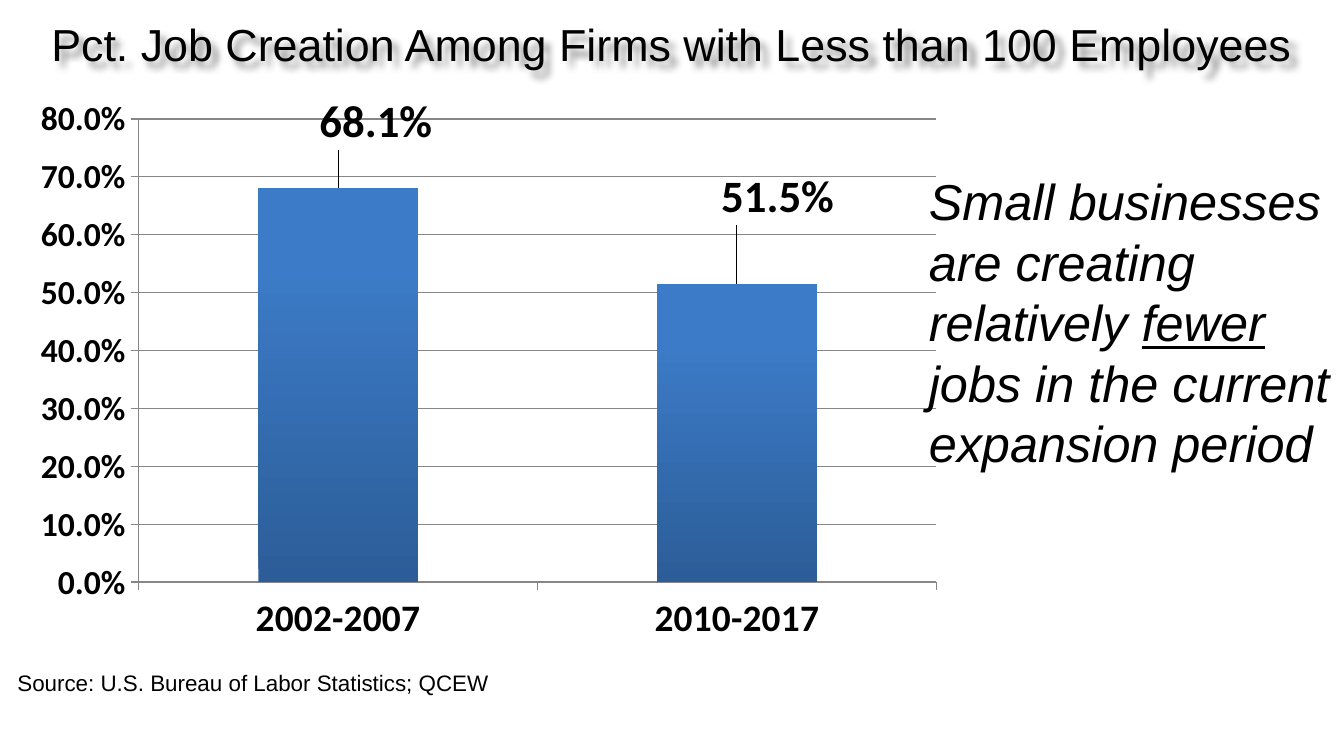
from lxml import etree
from pptx import Presentation
from pptx import util as u
from pptx.chart import data as chart_data
from pptx.dml import color
from pptx.enum import chart as ch, text
from pptx.oxml import ns, parse_xml

PX = 9525
BLACK = color.RGBColor(0x00, 0x00, 0x00)
GRID = color.RGBColor(0x86, 0x86, 0x86)
BAR_DARK = color.RGBColor(0x2C, 0x5D, 0x98)
BAR_LIGHT = color.RGBColor(0x3C, 0x7B, 0xC7)
SHADOW = (
    f'<a:effectLst {ns.nsdecls("a")}><a:outerShdw blurRad="38100" dist="50800" dir="2700000" '
    'algn="tl"><a:srgbClr val="000000"><a:alpha val="43000"/></a:srgbClr></a:outerShdw></a:effectLst>'
)
NO_LEADERS = (
    f'<c:extLst {ns.nsdecls("c")}><c:ext uri="{{CE6537A1-D6FC-4f65-9D91-7224C49458BB}}" '
    'xmlns:c15="http://schemas.microsoft.com/office/drawing/2012/chart">'
    '<c15:showLeaderLines val="0"/></c:ext></c:extLst>'
)


def px(*lengths):
    """Turn px lengths into EMU."""
    return [u.Emu(length * PX) for length in lengths]


def apply(target, **values):
    """Set each given attribute on the target."""
    for key, value in values.items():
        setattr(target, key, value)


def style(font, size, name="Arial", **values):
    """Give a font its size, face and black colour."""
    apply(font, size=u.Pt(size), name=name, **values)
    font.color.rgb = BLACK


def manual_layout(**values):
    """Make a chart layout element from the given settings."""
    layout = etree.Element(ns.qn("c:layout"))
    manual = etree.SubElement(layout, ns.qn("c:manualLayout"))
    for key, value in values.items():
        etree.SubElement(manual, ns.qn(f"c:{key}"), val=str(value))
    return layout


def add_title(slide, box, wording):
    """Place the shadowed heading in the title placeholder."""
    title = slide.shapes.title
    title.left, title.top, title.width, title.height = px(*box)
    title.fill.background()
    title._element.spPr.append(parse_xml(SHADOW))
    frame = title.text_frame
    apply(frame, word_wrap=True, auto_size=text.MSO_AUTO_SIZE.NONE,
          vertical_anchor=text.MSO_ANCHOR.TOP)
    paragraph = frame.paragraphs[0]
    paragraph.alignment = text.PP_ALIGN.CENTER
    heading = paragraph.add_run()
    heading.text = wording
    style(heading.font, 24)


def add_text(slide, box, pieces, size, **values):
    """Place one paragraph made of (wording, underlined) pieces."""
    frame = slide.shapes.add_textbox(*px(*box)).text_frame
    apply(frame, word_wrap=True, margin_right=px(5)[0])
    for wording, underlined in pieces:
        run = frame.paragraphs[0].add_run()
        run.text = wording
        style(run.font, size, underline=underlined, **values)


def format_axes(chart):
    """Set the ticks, fonts, scale and gridlines of both axes."""
    for axis, size in ((chart.category_axis, 20), (chart.value_axis, 18)):
        apply(axis, major_tick_mark=ch.XL_TICK_MARK.OUTSIDE, minor_tick_mark=ch.XL_TICK_MARK.NONE)
        style(axis.tick_labels.font, size, "Calibri", bold=True)
        axis.format.line.color.rgb = GRID
    shares_axis = chart.value_axis
    apply(shares_axis, minimum_scale=0, maximum_scale=0.8, major_unit=0.1,
          has_major_gridlines=True)
    shares_axis.major_gridlines.format.line.color.rgb = GRID
    apply(shares_axis.tick_labels, number_format="0.0%", number_format_is_linked=False)


def add_job_chart(slide, box, plot_box, shares, label_shifts):
    """Place the column chart with its shifted value labels."""
    width, height = box[2:]
    data = chart_data.CategoryChartData(number_format="0.0%")
    data.categories = list(shares)
    data.add_series("Series 1", list(shares.values()))
    chart = slide.shapes.add_chart(ch.XL_CHART_TYPE.COLUMN_CLUSTERED, *px(*box), data).chart
    apply(chart, has_legend=False, has_title=False)
    style(chart.font, 10, "Calibri")
    format_axes(chart)

    plot = chart.plots[0]
    apply(plot, gap_width=150, vary_by_categories=False)
    bars = plot.series[0]
    fill = bars.format.fill
    fill.gradient()
    fill.gradient_angle = 90
    for stop, shade, position in zip(fill.gradient_stops, (BAR_DARK, BAR_LIGHT), (0, 0.8)):
        stop.color.rgb = shade
        stop.position = position

    labels = bars.data_labels
    apply(labels, show_value=True, number_format="0.0%", number_format_is_linked=False)
    style(labels.font, 24, "Calibri", bold=True)
    for index, (right, down) in enumerate(label_shifts):
        label = bars.points[index].data_label
        style(label.font, 24, "Calibri", bold=True)
        label.position = ch.XL_LABEL_POSITION.OUTSIDE_END
        mark = bars._element.xpath(f"c:dLbls/c:dLbl/c:idx[@val='{index}']")[0]
        mark.addnext(manual_layout(x=right / width, y=down / height))
    bars._element.find(ns.qn("c:dLbls")).append(parse_xml(NO_LEADERS))

    area = chart._chartSpace.chart.plotArea
    for default in area.findall(ns.qn("c:layout")):
        area.remove(default)
    left, top, across, tall = plot_box
    area.insert(0, manual_layout(layoutTarget="inner", xMode="edge", yMode="edge",
                                 x=left / width, y=top / height,
                                 w=across / width, h=tall / height))


def main():
    """Build the slide and save it."""
    deck = Presentation()
    deck.slide_width, deck.slide_height = px(960, 540)
    slide = deck.slides.add_slide(deck.slide_layouts[5])
    add_title(slide, (-24, 7, 1007, 48),
              "Pct. Job Creation Among Firms with Less than 100 Employees")
    add_job_chart(slide, (16, 62, 666, 404), (83, 23, 570, 331),
                  {"2002-2007": 0.681, "2010-2017": 0.515}, [(27, -23), (29, -38)])
    add_text(slide, (654, 117, 306, 236),
             [("Small businesses are creating relatively ", False), ("fewer", True),
              (" jobs in the current expansion period", False)],
             27, italic=True)
    add_text(slide, (3, 473, 475, 29),
             [("Source: U.S. Bureau of Labor Statistics; QCEW", False)], 12)
    deck.save("out.pptx")


if __name__ == "__main__":
    main()
